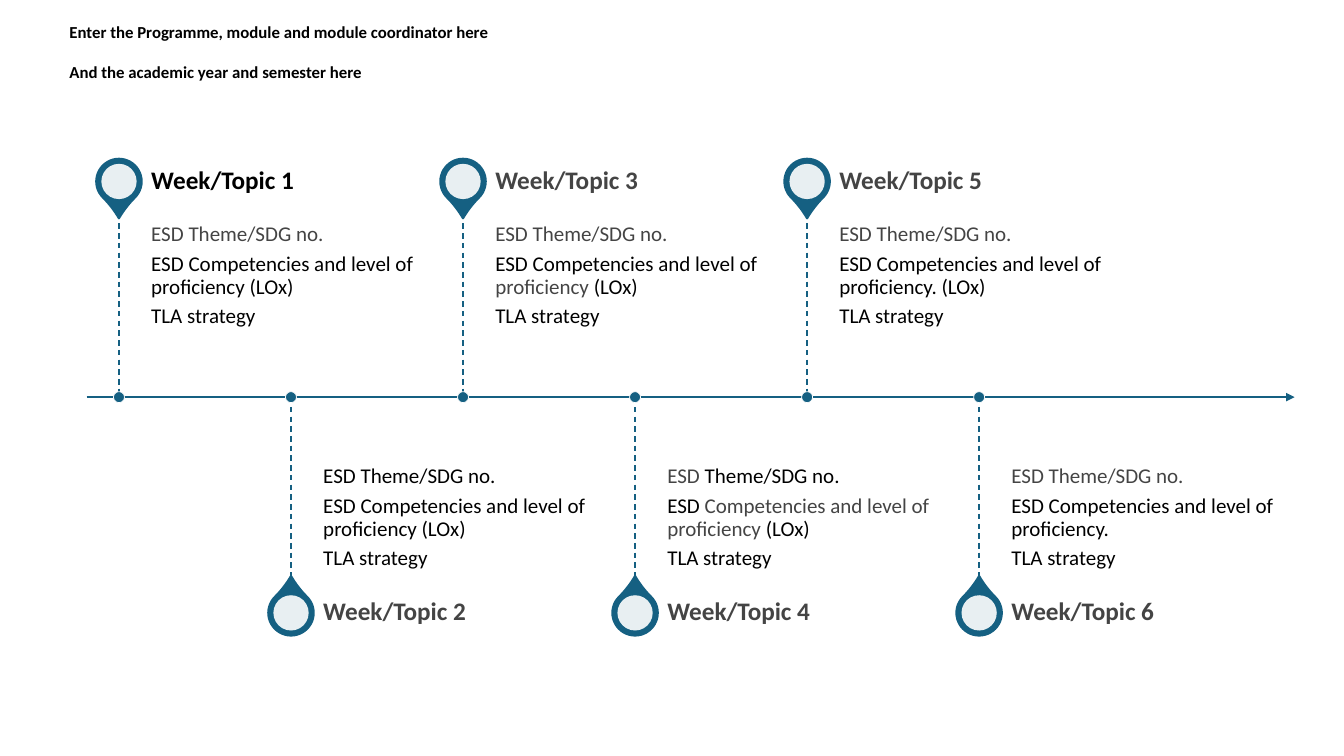
"""Build a six-stop alternating timeline slide for a module plan."""
from lxml import etree
from pptx import Presentation, util as u
from pptx.dml.color import RGBColor
from pptx.enum import dml, shapes, text
from pptx.oxml import ns

WIDTH, HEIGHT = 13.33, 7.5
COLUMN = WIDTH * 0.128
FIRST_STOP = 1.18
AXIS = 3.94
STEM = 1.82
TITLE_HEIGHT = 0.64
TEXT_GAP = 0.32
TEXT_WIDTH = 2.8
FONT = "Calibri"
COLORS = {"teal": "156082", "white": "FFFFFF", "grey": "444444", "black": "000000"}

THEME = "ESD Theme/SDG no."
COMPETENCIES = "ESD Competencies and level of proficiency"
STRATEGY = [("black", "TLA strategy")]
STOPS = [
    ("black", [[("grey", THEME)], [("black", COMPETENCIES + " (LOx)")], STRATEGY]),
    ("grey", [[("black", THEME)], [("black", COMPETENCIES + " (LOx)")], STRATEGY]),
    ("grey", [[("grey", THEME)],
              [("black", "ESD Competencies and level of "), ("grey", "proficiency "),
               ("black", "(LOx)")], STRATEGY]),
    ("grey", [[("grey", "ESD "), ("black", "Theme/SDG no.")],
              [("black", "ESD "), ("grey", "Competencies and level of proficiency "),
               ("black", "(LOx)")], STRATEGY]),
    ("grey", [[("grey", THEME)], [("black", COMPETENCIES + ". (LOx)")], STRATEGY]),
    ("grey", [[("grey", THEME)], [("black", COMPETENCIES + ".")], STRATEGY]),
]
HEADING = [[("black", "Enter the Programme, module and module coordinator here")],
           [("black", "And the academic year and semester here")]]


def rgb(color):
    """Return the named colour."""
    return RGBColor.from_string(COLORS[color])


def add_line(slide, start, end, weight):
    """Draw a teal line without shadow and return it."""
    line = slide.shapes.add_connector(
        shapes.MSO_CONNECTOR.STRAIGHT, *(u.Inches(value) for value in start + end))
    line.line.color.rgb = rgb("teal")
    line.line.width = u.Pt(weight)
    etree.SubElement(line._element.spPr, ns.qn("a:effectLst"))
    return line


def add_mark(slide, kind, center, size, fill, outline=None, weight=0):
    """Draw a filled preset shape around a centre point."""
    x, y = center
    mark = slide.shapes.add_shape(
        kind, u.Inches(x - size / 2), u.Inches(y - size / 2), u.Inches(size), u.Inches(size))
    mark.shadow.inherit = False
    mark.fill.solid()
    mark.fill.fore_color.rgb = rgb(fill)
    if outline:
        mark.line.color.rgb = rgb(outline)
        mark.line.width = u.Pt(weight)
    else:
        mark.line.fill.background()
    return mark


def add_text(slide, box, paragraphs, size, anchor, insets, bold=False, spacing=0.9, gap=5):
    """Write paragraphs of coloured runs in a wrapping box."""
    frame = slide.shapes.add_textbox(*(u.Inches(value) for value in box)).text_frame
    frame.word_wrap = True
    frame.vertical_anchor = anchor
    (frame.margin_left, frame.margin_top,
     frame.margin_right, frame.margin_bottom) = (u.Inches(value) for value in insets)
    for index, runs in enumerate(paragraphs):
        paragraph = frame.add_paragraph() if index else frame.paragraphs[0]
        paragraph.line_spacing = spacing
        if index:
            paragraph.space_before = u.Pt(gap)
        for color, words in runs:
            run = paragraph.add_run()
            run.text = words
            run.font.name = FONT
            run.font.size = u.Pt(size)
            run.font.bold = bold
            run.font.color.rgb = rgb(color)


def add_axis(slide):
    """Draw the horizontal time arrow."""
    axis = add_line(slide, (0.86, AXIS), (12.84, AXIS), 1.5)
    etree.SubElement(axis.line._get_or_add_ln(), ns.qn("a:tailEnd"), type="triangle")


def add_pin(slide, center, rotation):
    """Draw a map pin with a pale round centre."""
    pin = add_mark(slide, shapes.MSO_SHAPE.TEAR, center, 0.45, "teal", "teal", 1.5)
    pin.adjustments[0] = 1.15
    pin.rotation = rotation
    hole = add_mark(slide, shapes.MSO_SHAPE.OVAL, center, 0.35, "white")
    tint = hole._element.spPr.find(".//" + ns.qn("a:srgbClr"))
    etree.SubElement(tint, ns.qn("a:alpha"), val="90000")


def add_stop(slide, index, title_color, details):
    """Draw one stop, above the axis for even indexes and below for odd ones."""
    above = index % 2 == 0
    side = -1 if above else 1
    x = FIRST_STOP + index * COLUMN
    stem_end = AXIS + side * STEM
    title_middle = stem_end + side * TITLE_HEIGHT / 2
    text_left = x + TEXT_GAP
    add_pin(slide, (x, title_middle), 135 if above else 315)
    add_text(slide, (text_left, min(AXIS, stem_end), TEXT_WIDTH, STEM), details, 15,
             text.MSO_ANCHOR.TOP if above else text.MSO_ANCHOR.BOTTOM,
             (0, 0.1, 0.1, 0.16) if above else (0, 0.16, 0, 0.1))
    add_text(slide, (text_left, title_middle - TITLE_HEIGHT / 2, TEXT_WIDTH, TITLE_HEIGHT),
             [[(title_color, f"Week/Topic {index + 1}")]], 18,
             text.MSO_ANCHOR.MIDDLE, (0, 0, 0.12, 0), bold=True)
    stem = add_line(slide, (x, min(AXIS, stem_end)), (x, max(AXIS, stem_end)), 1)
    stem.line.dash_style = dml.MSO_LINE.DASH
    add_mark(slide, shapes.MSO_SHAPE.OVAL, (x, AXIS), 0.11, "teal", "white", 0.5)


def main():
    """Build and save the slide."""
    deck = Presentation()
    deck.slide_width, deck.slide_height = u.Inches(WIDTH), u.Inches(HEIGHT)
    slide = deck.slides.add_slide(deck.slide_layouts[6])
    add_axis(slide)
    for index, (title_color, details) in enumerate(STOPS):
        add_stop(slide, index, title_color, details)
    add_text(slide, (0.59, 0.17, 7.91, 0.71), HEADING, 12, text.MSO_ANCHOR.TOP,
             (0.1, 0.05, 0.1, 0.05), bold=True, spacing=1.0, gap=14)
    deck.save("out.pptx")


if __name__ == "__main__":
    main()
